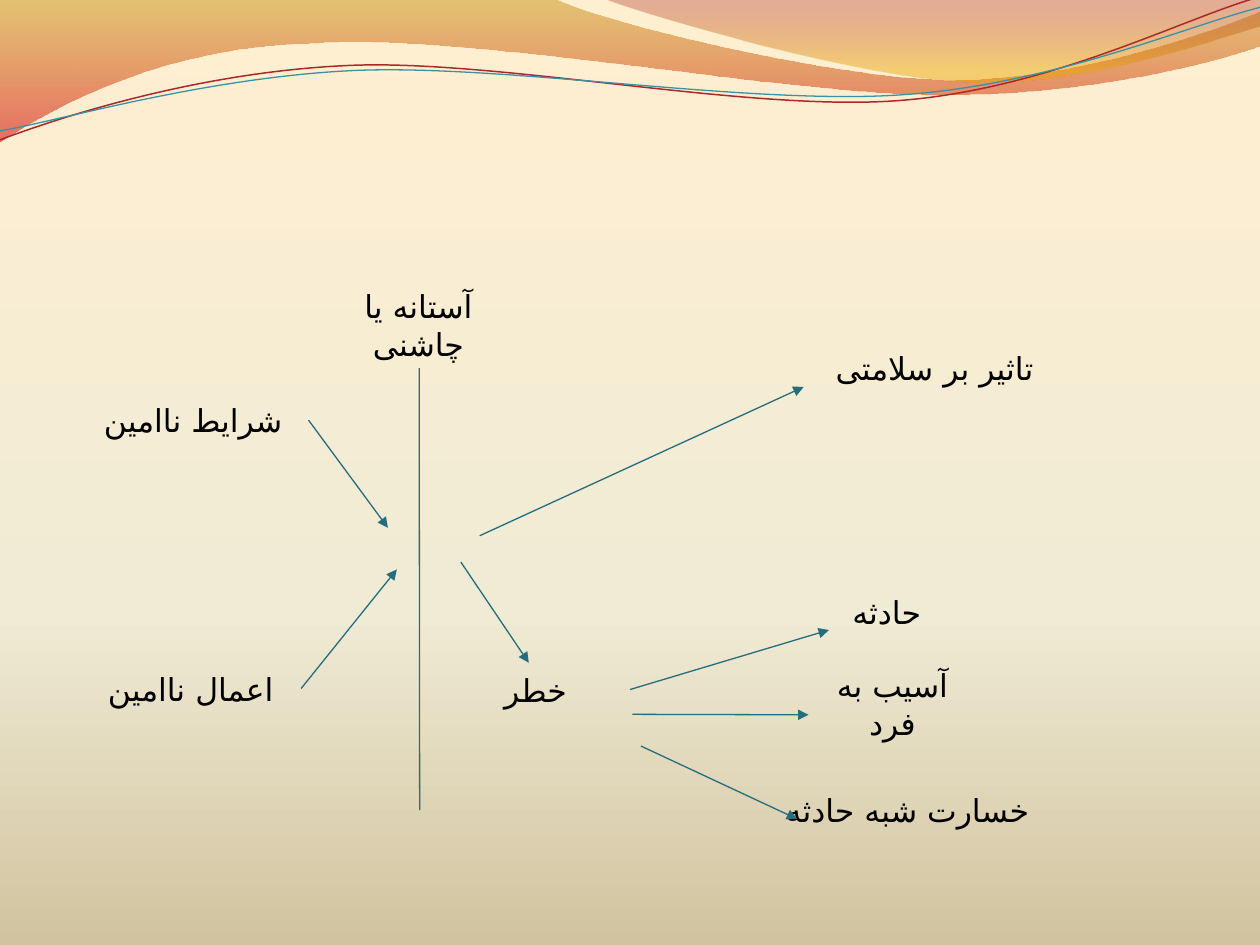
from lxml import etree
from pptx import Presentation
from pptx.dml.color import RGBColor
from pptx.enum import shapes, text
from pptx.oxml.ns import qn
from pptx.util import Cm, Pt

FONT = "Cambria"
ARABIC_FONT = "DejaVu Sans"
BLACK = RGBColor(0x00, 0x00, 0x00)
TEAL = RGBColor(0x25, 0x6C, 0x7D)
RED = RGBColor(0xAC, 0x28, 0x29)
BLUE = RGBColor(0x38, 0x91, 0xA7)
CREAM = RGBColor(0xFF, 0xEF, 0xD1)
IVORY = RGBColor(0xF0, 0xEB, 0xD5)
SAND = RGBColor(0xD1, 0xC3, 0x9F)
OCHRE = RGBColor(0xC3, 0x8B, 0x00)
SCARLET = RGBColor(0xD6, 0x03, 0x05)
WINE = RGBColor(0xA1, 0x11, 0x12)
AMBER = RGBColor(0xE9, 0xA6, 0x00)

# Wave outlines in cm: a pair is a corner, six numbers are a Bezier curve
BAND = [(0, 0), (11.18, -0.03),
        (12.09, 0.43, 16.87, 1.6, 19.25, 1.6),
        (21.67, 1.6, 24.33, 0.66, 25.4, 0.23), (25.43, 0.91),
        (24.97, 1.12, 22.1, 1.93, 18.95, 1.91),
        (15.8, 1.91, 9.7, 0.71, 6.53, 0.86),
        (3.28, 0.91, 1.17, 2.11, -0.03, 2.87)]
TONGUE = [(12.17, -0.03),
          (12.93, 0.28, 17.32, 1.57, 19.53, 1.65),
          (21.74, 1.75, 24.41, 0.81, 25.4, 0.53), (25.4, 0)]
RED_WAVE = [(0, 2.82),
            (1.22, 2.36, 4.01, 1.45, 7.04, 1.32),
            (10.03, 1.19, 15.06, 2.26, 18.11, 2.03),
            (21.16, 1.8, 23.83, 0.38, 25.35, -0.05)]
BLUE_WAVE = [(0, 2.64),
             (1.19, 2.44, 4.17, 1.55, 7.19, 1.42),
             (10.24, 1.3, 15.16, 2.13, 18.21, 1.91),
             (21.23, 1.7, 23.9, 0.53, 25.4, 0.15)]

# Labels: name -> wording and left, top, width, height in the diagram (cm)
LABELS = {
    "health": ("تاثیر بر سلامتی", 14.73, 0.86, 5.08, 1.27),
    "threshold": ("آستانه یا چاشنی", 5.38, 0, 2.97, 1.27),
    "conditions": ("شرایط ناامین", 0, 1.7, 4.65, 1.7),
    "accident": ("حادثه", 14.5, 5.46, 3.61, 1.91),
    "danger": ("خطر", 7.32, 6.81, 3.81, 2.34),
    "acts": ("اعمال ناامین", 0.05, 7.11, 4.45, 1.7),
    "injury": ("آسیب به فرد", 14.73, 7.42, 3.38, 1.7),
    "near_miss": ("خسارت شبه حادثه", 13.97, 9.78, 5.51, 1.27),
}
THRESHOLD_LINE = (6.88, 1.5, 6.89, 10.41)
# Arrows: start and end in the diagram (cm), label whose right side they leave
ARROWS = [
    (4.5, 7.98, 6.43, 5.56, "acts"),
    (4.65, 2.54, 6.25, 4.72, "conditions"),
    (7.72, 5.41, 9.09, 7.44, None),
    (8.1, 4.88, 14.63, 1.88, None),
    (11.13, 7.98, 15.14, 6.78, "danger"),
    (11.18, 8.48, 14.73, 8.49, None),
    (11.35, 9.12, 14.5, 10.59, None),
]


def set_gradient(fill, element, stops):
    """Top-down gradient from (position %, colour, opacity %) stops."""
    fill.gradient()
    fill.gradient_angle = 270
    stop_list = element.find(".//" + qn("a:gsLst"))
    for stop in list(stop_list):
        stop_list.remove(stop)
    for position, color, opacity in stops:
        stop = etree.SubElement(stop_list, qn("a:gs"), pos=str(position * 1000))
        rgb = etree.SubElement(stop, qn("a:srgbClr"), val=str(color))
        if opacity < 100:
            etree.SubElement(rgb, qn("a:alpha"), val=str(opacity * 1000))


def add_outline(slide, left, top, outline, close):
    points = [(left + Cm(segment[i]), top + Cm(segment[i + 1]))
              for segment in outline for i in range(0, len(segment), 2)]
    builder = slide.shapes.build_freeform(*points[0])
    builder.add_line_segments(points[1:], close=close)
    shape = builder.convert_to_shape()
    shape.shadow.inherit = False
    # Join the three points of each curve into one Bezier segment
    steps = iter(shape.element.findall(".//" + qn("a:lnTo")))
    for segment in outline[1:]:
        first = next(steps)
        if len(segment) == 6:
            curve = etree.Element(qn("a:cubicBezTo"))
            first.addprevious(curve)
            for step in (first, next(steps), next(steps)):
                curve.append(step[0])
                step.getparent().remove(step)
    return shape


def add_waves(slide, left, top):
    # Filled waves
    for outline, stops in ((BAND, [(0, OCHRE, 45), (100, SCARLET, 55)]),
                           (TONGUE, [(0, WINE, 30), (80, AMBER, 45)])):
        shape = add_outline(slide, left, top, outline, True)
        set_gradient(shape.fill, shape.element, stops)
        shape.line.fill.background()
    # Thin wave lines
    for outline, color, width in ((RED_WAVE, RED, 0.85), (BLUE_WAVE, BLUE, 0.75)):
        shape = add_outline(slide, left, top, outline, False)
        shape.fill.background()
        shape.line.color.rgb = color
        shape.line.width = Pt(width)


def add_label(slide, left, top, width, height, wording):
    label = slide.shapes.add_textbox(left, top, width, height)
    frame = label.text_frame
    frame.word_wrap = True
    frame.vertical_anchor = text.MSO_ANCHOR.MIDDLE
    paragraph = frame.paragraphs[0]
    paragraph.text = wording
    paragraph.alignment = text.PP_ALIGN.CENTER
    font = paragraph.font
    font.size = Pt(18)
    font.color.rgb = BLACK
    font.name = FONT
    # Right-to-left text and its complex-script font
    properties = paragraph._p.get_or_add_pPr()
    properties.set("rtl", "1")
    etree.SubElement(properties.find(qn("a:defRPr")), qn("a:cs"), typeface=ARABIC_FONT)
    return label


def add_line(slide, left, top, ends, arrow=False):
    x1, y1, x2, y2 = (Cm(value) for value in ends)
    line = slide.shapes.add_connector(shapes.MSO_CONNECTOR.STRAIGHT,
                                      left + x1, top + y1, left + x2, top + y2)
    line.line.color.rgb = TEAL
    line.line.width = Pt(0.75)
    if arrow:
        etree.SubElement(line.line._get_or_add_ln(), qn("a:tailEnd"), type="triangle")
    etree.SubElement(line.element.spPr, qn("a:effectLst"))
    return line


def add_diagram(slide, left, top):
    # Labels
    labels = {}
    for name, (wording, x, y, width, height) in LABELS.items():
        labels[name] = add_label(slide, left + Cm(x), top + Cm(y),
                                 Cm(width), Cm(height), wording)
    # Threshold line and arrows
    add_line(slide, left, top, THRESHOLD_LINE)
    for *ends, origin in ARROWS:
        line = add_line(slide, left, top, ends, arrow=True)
        if origin:
            line.begin_connect(labels[origin], 3)


def main():
    presentation = Presentation()
    presentation.slide_width, presentation.slide_height = Cm(25.4), Cm(19.05)
    slide = presentation.slides.add_slide(presentation.slide_layouts[6])
    set_gradient(slide.background.fill, slide.element,
                 [(0, CREAM, 100), (65, IVORY, 100), (100, SAND, 100)])
    add_waves(slide, Cm(0), Cm(0))
    add_diagram(slide, Cm(1.57), Cm(5.92))
    presentation.save("out.pptx")


if __name__ == "__main__":
    main()
